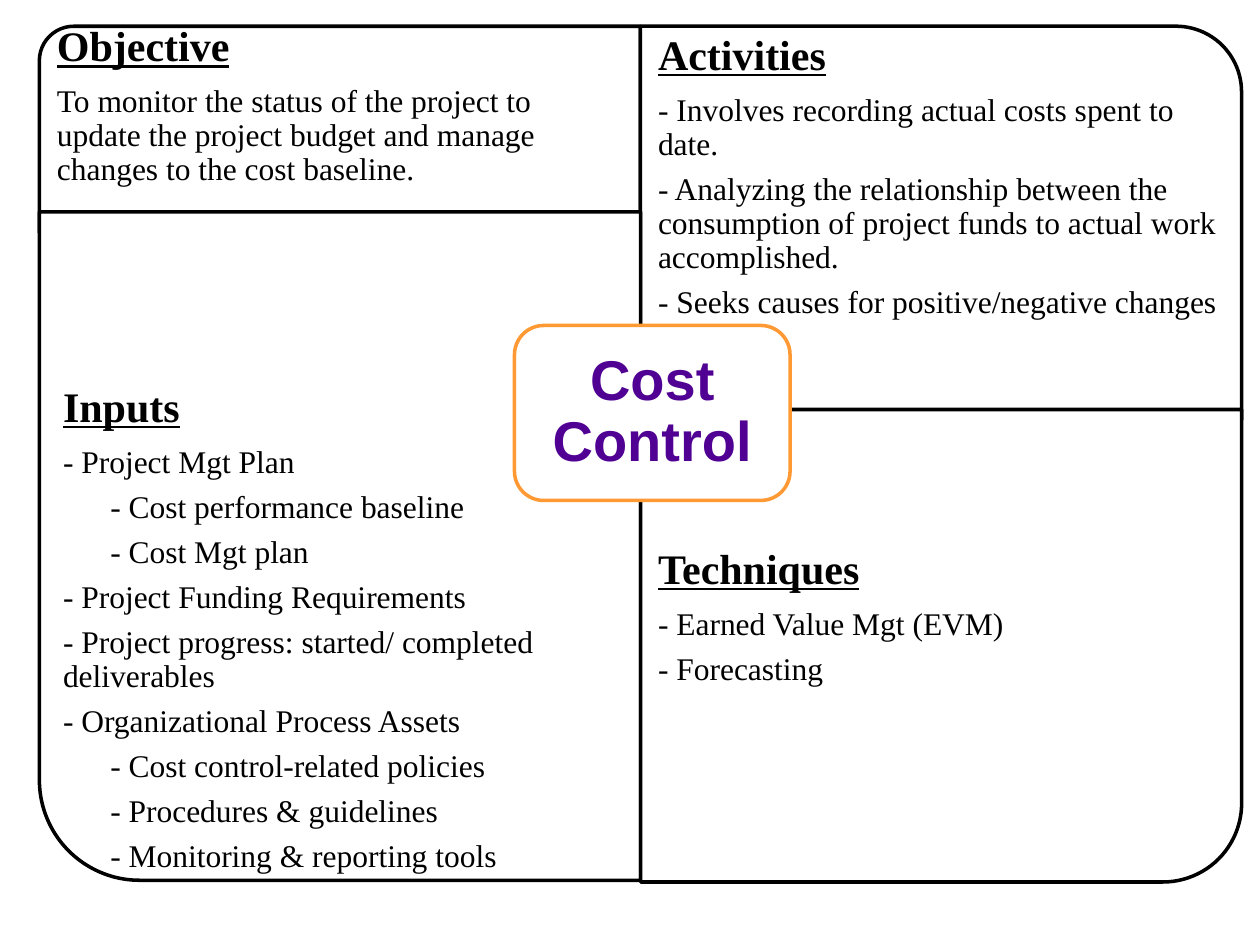
import pptx
import pptx.dml.color
import pptx.enum.shapes
import pptx.enum.text
import pptx.util

Pt = pptx.util.Pt
RGBColor = pptx.dml.color.RGBColor
MSO_SHAPE = pptx.enum.shapes.MSO_SHAPE
MSO_ANCHOR = pptx.enum.text.MSO_ANCHOR
PP_ALIGN = pptx.enum.text.PP_ALIGN

BLACK = RGBColor(0, 0, 0)
WHITE = RGBColor(255, 255, 255)
ORANGE = RGBColor(0xFF, 0x99, 0x33)
PURPLE = RGBColor(0x50, 0x00, 0x93)

LEFT, MIDDLE, COLUMN = 22.5, 366, 343.5
SUB_INDENT = 27

HEADING = {"name": "Times New Roman", "size": Pt(24), "bold": True, "underline": True}
ITEM = {"name": "Times New Roman", "size": Pt(18), "bold": False, "underline": False}
TOPIC = {"name": "Arial", "size": Pt(32), "bold": True}

# left, top, height, rotation, text top, side inset, heading, (level, line) items
QUADRANTS = [
    (LEFT, 15, 118, 270, 14.5, 10, "Objective", [
        (0, "To monitor the status of the project to update the project budget "
            "and manage changes to the cost baseline."),
    ]),
    (MIDDLE, 15, 225, 0, 19.5, 10, "Activities", [
        (0, "- Involves recording actual costs spent to date."),
        (0, "- Analyzing the relationship between the consumption of project "
            "funds to actual work accomplished."),
        (0, "- Seeks causes for positive/negative changes"),
    ]),
    (LEFT, 121, 382, 180, 220.5, 13.5, "Inputs", [
        (0, "- Project Mgt Plan"),
        (1, "- Cost performance baseline"),
        (1, "- Cost Mgt plan"),
        (0, "- Project Funding Requirements"),
        (0, "- Project progress: started/ completed deliverables"),
        (0, "- Organizational Process Assets"),
        (1, "- Cost control-related policies"),
        (1, "- Procedures & guidelines"),
        (1, "- Monitoring & reporting tools"),
    ]),
    (MIDDLE, 234, 270, 90, 313, 10, "Techniques", [
        (0, "- Earned Value Mgt (EVM)"),
        (0, "- Forecasting"),
    ]),
]


def add_panel(kind, left, top, width, height, outline):
    panel = slide.shapes.add_shape(kind, Pt(left), Pt(top), Pt(width), Pt(height))
    panel.shadow.inherit = False
    panel.fill.solid()
    panel.fill.fore_color.rgb = WHITE
    panel.line.color.rgb = outline
    panel.line.width = Pt(2)
    return panel


def place_text(holder, box, inset, anchor, lines, color):
    """Move a placeholder to the front and fill it with (level, text, format) lines."""
    slide.shapes._spTree.append(holder._element)
    holder.left, holder.top, holder.width, holder.height = map(Pt, box)
    frame = holder.text_frame
    layout = {"word_wrap": True, "auto_size": pptx.enum.text.MSO_AUTO_SIZE.NONE,
              "vertical_anchor": anchor, "margin_left": Pt(inset),
              "margin_right": Pt(inset), "margin_top": 0, "margin_bottom": 0}
    for key, value in layout.items():
        setattr(frame, key, value)
    frame.text = "\n".join(text for _, text, _ in lines)
    for paragraph, (level, _, style) in zip(frame.paragraphs, lines):
        paragraph.line_spacing = 0.9
        paragraph.space_before = Pt(0)
        paragraph.space_after = Pt(round(0.35 * style["size"].pt, 2))
        properties = paragraph._p.get_or_add_pPr()
        properties.set("marL", str(Pt(level * SUB_INDENT)))
        properties.set("indent", "0")
        properties.append(pptx.oxml.parse_xml(
            '<a:buNone xmlns:a="http://schemas.openxmlformats.org/drawingml/2006/main"/>'))
        paragraph.level = level
        font = paragraph.runs[0].font
        for key, value in style.items():
            setattr(font, key, value)
        font.color.rgb = color


presentation = pptx.Presentation()
presentation.slide_width, presentation.slide_height = Pt(720), Pt(540)
slide = presentation.slides.add_slide(presentation.slide_layouts.get_by_name("Comparison"))
topic, *bodies = slide.placeholders

for body, (left, top, height, rotation, text_top, inset, heading, items) in zip(bodies, QUADRANTS):
    # A quarter turn swaps the sides around the same centre
    width, depth = (height, COLUMN) if rotation in (90, 270) else (COLUMN, height)
    quadrant = add_panel(MSO_SHAPE.ROUND_1_RECTANGLE, left + (COLUMN - width) / 2,
                         top + (height - depth) / 2, width, depth, BLACK)
    quadrant.rotation = rotation
    lines = [(0, heading, HEADING)] + [(level, text, ITEM) for level, text in items]
    place_text(body, (left, text_top, COLUMN, top + height - text_top),
               inset, MSO_ANCHOR.TOP, lines, BLACK)

add_panel(MSO_SHAPE.ROUNDED_RECTANGLE, 294, 186, 157.5, 100, ORANGE)
place_text(topic, (299, 191, 147.5, 90), 9.5, MSO_ANCHOR.MIDDLE,
           [(0, "Cost Control", TOPIC)], PURPLE)
topic.text_frame.paragraphs[0].alignment = PP_ALIGN.CENTER
topic.text_frame.paragraphs[0].space_after = Pt(0)

presentation.save("out.pptx")
